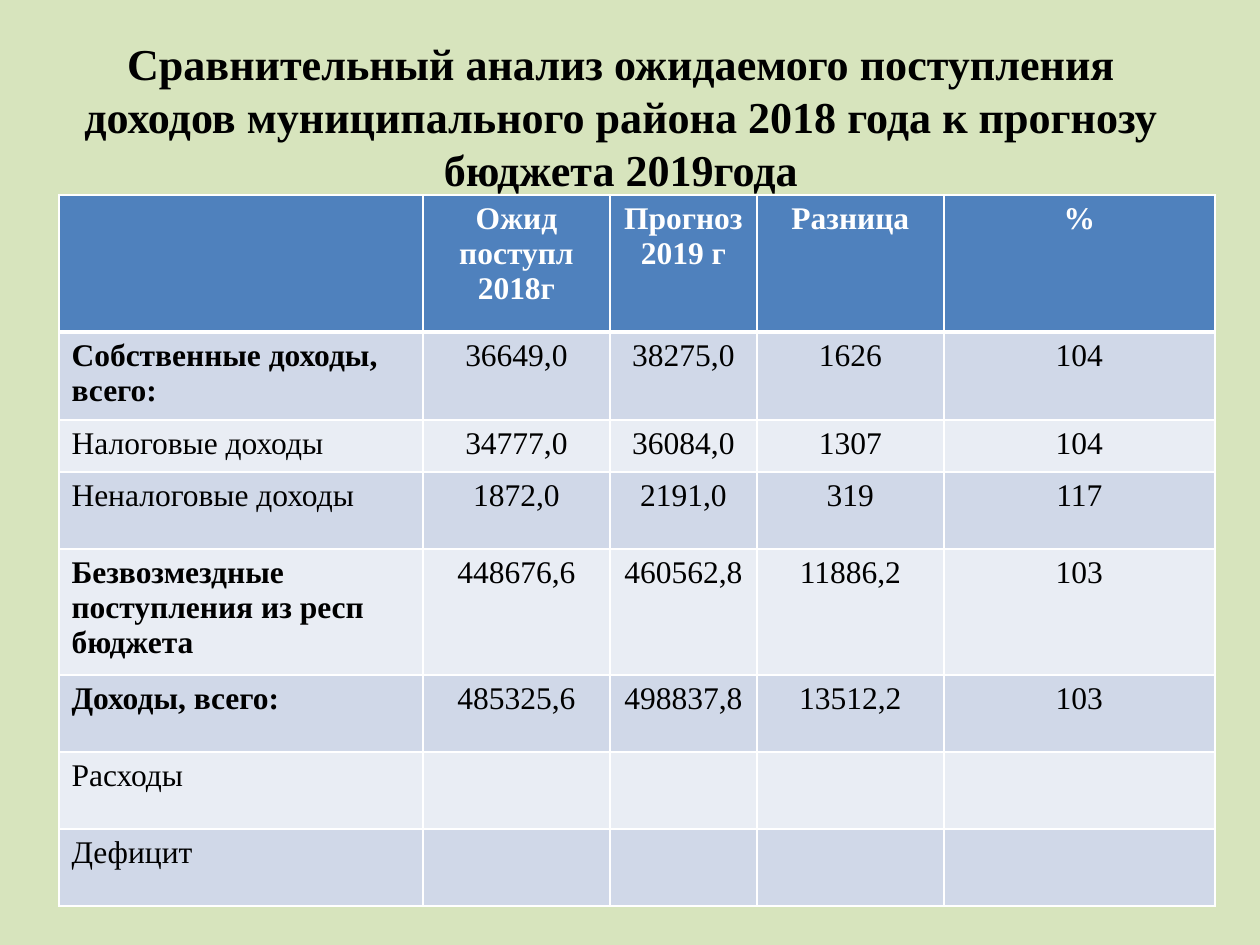
from lxml.etree import SubElement
from pptx import Presentation
from pptx.dml.color import RGBColor
from pptx.enum.text import MSO_ANCHOR, PP_ALIGN
from pptx.oxml.ns import qn
from pptx.util import Pt

PX = 9144000 // 1260
FONT = "Times New Roman"
BLACK, WHITE = "000000", "FFFFFF"
HEADER_FILL = "4F81BD"
BAND_FILLS = ["E9EDF4", "D0D8E8"]

TITLE = ("Сравнительный анализ ожидаемого поступления доходов "
         "муниципального района 2018 года к прогнозу бюджета 2019года")
COL_WIDTHS = [364, 187, 147, 187, 271]
ROW_HEIGHTS = [137, 79, 52, 77, 88, 77, 77, 77]
ROWS = [
    ["", "Ожид поступл 2018г", "Прогноз 2019 г", "Разница", "%"],
    ["Собственные доходы, всего:", "36649,0", "38275,0", "1626", "104"],
    ["Налоговые доходы", "34777,0", "36084,0", "1307", "104"],
    ["Неналоговые доходы", "1872,0", "2191,0", "319", "117"],
    ["Безвозмездные поступления из респ бюджета",
     "448676,6", "460562,8", "11886,2", "103"],
    ["Доходы, всего:", "485325,6", "498837,8", "13512,2", "103"],
    ["Расходы", "", "", "", ""],
    ["Дефицит", "", "", "", ""],
]
BOLD_LABEL_ROWS = {1, 4, 5}


def px(n):
    return n * PX


def paint(fill, color):
    fill.solid()
    fill.fore_color.rgb = RGBColor.from_string(color)


def add_run(p, text, size, color, bold):
    r = p.add_run()
    r.text = text
    r.font.name = FONT
    r.font.size = Pt(size)
    r.font.bold = bold
    paint(r.font.fill, color)


def set_borders(cell, widths):
    """Draw white cell borders; widths maps an edge tag to points."""
    tc_pr = cell._tc.get_or_add_tcPr()
    for i, (edge, width) in enumerate(widths.items()):
        ln = tc_pr.makeelement(qn(f"a:{edge}"), {"w": str(Pt(width))})
        fill = SubElement(ln, qn("a:solidFill"))
        SubElement(fill, qn("a:srgbClr"), val=WHITE)
        tc_pr.insert(i, ln)


def add_title(s, x, y, w, h):
    tf = s.shapes.add_textbox(px(x), px(y), px(w), px(h)).text_frame
    tf.word_wrap = True
    tf.vertical_anchor = MSO_ANCHOR.MIDDLE
    p = tf.paragraphs[0]
    p.alignment = PP_ALIGN.CENTER
    p.line_spacing = Pt(30.3)
    add_run(p, TITLE, 25.2, BLACK, True)


def add_income_table(s, x, y):
    table = s.shapes.add_table(
        len(ROWS), len(COL_WIDTHS), px(x), px(y),
        px(sum(COL_WIDTHS)), px(sum(ROW_HEIGHTS))).table
    for col, width in zip(table.columns, COL_WIDTHS):
        col.width = px(width)
    for row, height in zip(table.rows, ROW_HEIGHTS):
        row.height = px(height)
    for i, texts in enumerate(ROWS):
        header = i == 0
        for j, text in enumerate(texts):
            cell = table.cell(i, j)
            paint(cell.fill, HEADER_FILL if header else BAND_FILLS[i % 2])
            set_borders(cell, {"lnL": 1, "lnR": 1,
                               "lnT": 3 if i == 1 else 1,
                               "lnB": 3 if header else 1})
            p = cell.text_frame.paragraphs[0]
            if header or j > 0:
                p.alignment = PP_ALIGN.CENTER
            if text:
                bold = header or (j == 0 and i in BOLD_LABEL_ROWS)
                add_run(p, text, 18, WHITE if header else BLACK, bold)


def main():
    prs = Presentation()
    prs.slide_width, prs.slide_height = px(1260), px(945)
    s = prs.slides.add_slide(prs.slide_layouts[6])
    paint(s.background.fill, "D7E4BD")
    add_title(s, 54, 37, 1134, 158)
    add_income_table(s, 59, 195)
    prs.save("out.pptx")


if __name__ == "__main__":
    main()
